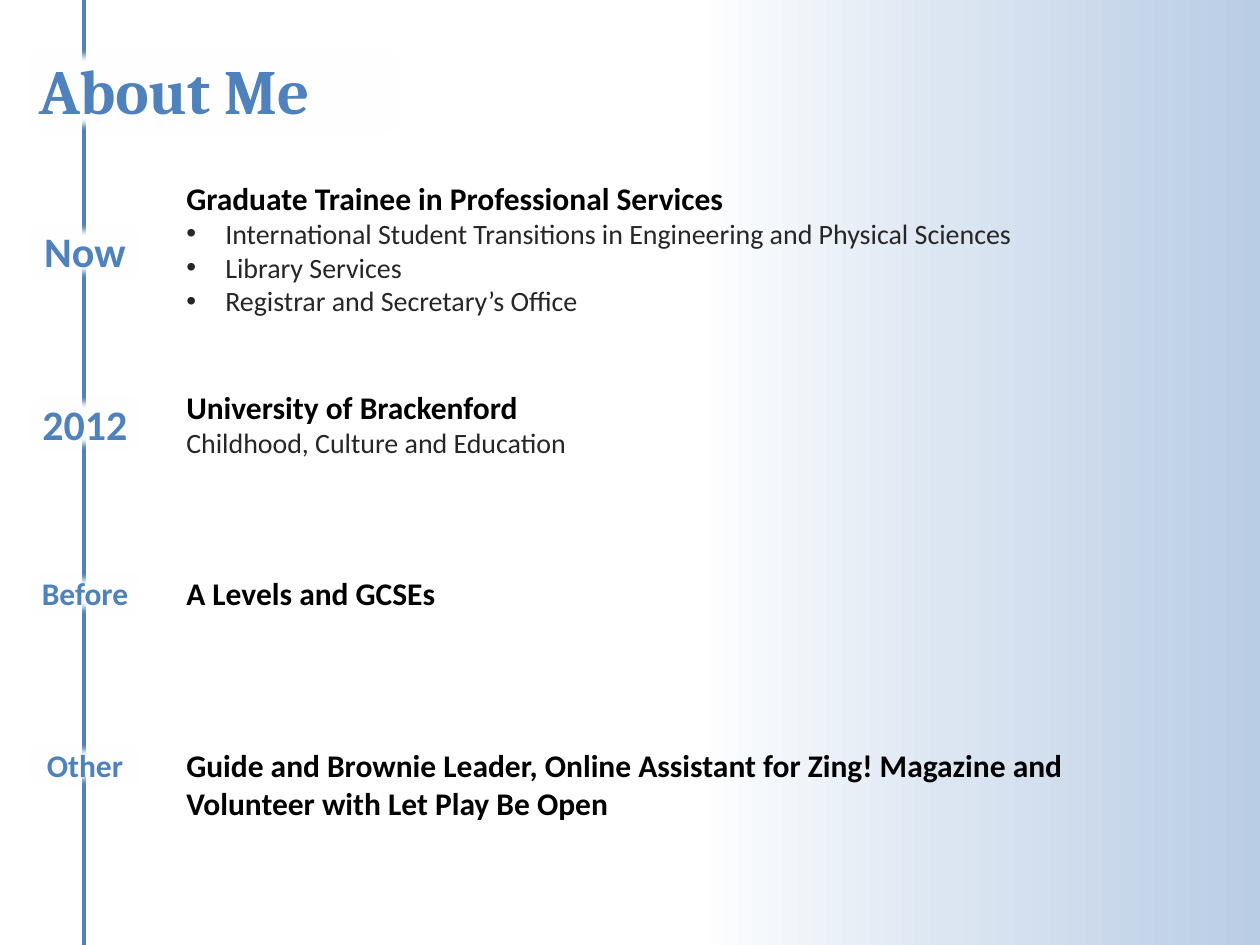
import copy
import pptx
import pptx.util
import pptx.dml.color
import pptx.enum.shapes
import pptx.enum.text
import pptx.oxml
import pptx.oxml.ns

Inches = pptx.util.Inches
Pt = pptx.util.Pt
qn = pptx.oxml.ns.qn
Align = pptx.enum.text.PP_ALIGN
BLUE, BLACK, GREY, WHITE = "4F81BD", "000000", "262626", "FFFFFF"
STOPS = [(0, "B9CDE5"), (0.25, "DCE6F2"), (0.45, WHITE)]
EVENTS = [
    ("Now", 24, 1.74, 0.5, 1.37, 1.25, "Graduate Trainee in Professional Services",
     ["International Student Transitions in Engineering and Physical Sciences",
      "Library Services", "Registrar and Secretary’s Office"], True),
    ("2012", 24, 3.11, 0.5, 3.03, 0.67, "University of Brackenford",
     ["Childhood, Culture and Education"], False),
    ("Before", 18, 4.51, 0.4, 4.51, 0.4, "A Levels and GCSEs", [], False),
    ("Other", 18, 5.87, 0.4, 5.87, 0.71,
     "Guide and Brownie Leader, Online Assistant for Zing! Magazine and "
     "Volunteer with Let Play Be Open", [], False),
]


def color(code):
    return pptx.dml.color.RGBColor.from_string(code)


def add_run(para, text, size, code, bold=True, face="Calibri"):
    run = para.add_run()
    run.text = text
    run.font.size = Pt(size)
    run.font.name = face
    run.font.bold = bold
    run.font.color.rgb = color(code)


def add_bullet(para):
    props = para._p.get_or_add_pPr()
    props.set("marL", str(Inches(0.31)))
    props.set("indent", str(-Inches(0.31)))
    font = props.makeelement(qn("a:buFont"), {"typeface": "Arial"})
    mark = props.makeelement(qn("a:buChar"), {"char": "•"})
    props.extend([font, mark])


def paint_back(slide):
    fill = slide.background.fill
    fill.gradient()
    fill.gradient_angle = 180
    stops = slide.element.find(".//" + qn("a:gsLst"))
    stops.append(copy.deepcopy(stops[-1]))
    for stop, (place, code) in zip(fill.gradient_stops, STOPS):
        stop.position = place
        stop.color.rgb = color(code)


def add_spine(slide, left, top, height):
    kind = pptx.enum.shapes.MSO_CONNECTOR.STRAIGHT
    x = Inches(left)
    line = slide.shapes.add_connector(kind, x, Inches(top), x, Inches(top + height))
    line.line.color.rgb = color(BLUE)
    line.line.width = Pt(2.25)
    props = line._element.spPr
    props.append(props.makeelement(qn("a:effectLst"), {}))


def add_label(slide, box, text, size, align, face="Calibri"):
    kind = pptx.enum.shapes.MSO_SHAPE.RECTANGLE
    shape = slide.shapes.add_shape(kind, *map(Inches, box))
    shape.fill.solid()
    shape.fill.fore_color.rgb = color(WHITE)
    shape.line.fill.background()
    shape.shadow.inherit = False
    effects = shape._element.spPr.find(qn("a:effectLst"))
    effects.append(effects.makeelement(qn("a:softEdge"), {"rad": str(Pt(5))}))
    frame = shape.text_frame
    frame.word_wrap = True
    frame.vertical_anchor = pptx.enum.text.MSO_ANCHOR.TOP
    para = frame.paragraphs[0]
    para.alignment = align
    add_run(para, text, size, BLUE, face=face)


def add_detail(slide, box, head, items, listed):
    frame = slide.shapes.add_textbox(*map(Inches, box)).text_frame
    frame.word_wrap = True
    add_run(frame.paragraphs[0], head, 18, BLACK)
    for item in items:
        para = frame.add_paragraph()
        if listed:
            add_bullet(para)
        add_run(para, item, 16, GREY, bold=False)


def main():
    deck = pptx.Presentation()
    deck.slide_width = Inches(10)
    deck.slide_height = Inches(7.5)
    slide = deck.slides.add_slide(deck.slide_layouts[6])
    paint_back(slide)
    add_spine(slide, 0.67, 0, 7.5)
    for date, size, y, high, top, tall, head, items, listed in EVENTS:
        add_detail(slide, (1.38, top, 8.19, tall), head, items, listed)
        add_label(slide, (0.21, y, 0.93, high), date, size, Align.CENTER)
    add_label(slide, (0.21, 0.36, 2.98, 0.71), "About Me", 36, Align.LEFT, "Cambria")
    deck.save("out.pptx")


if __name__ == "__main__":
    main()
